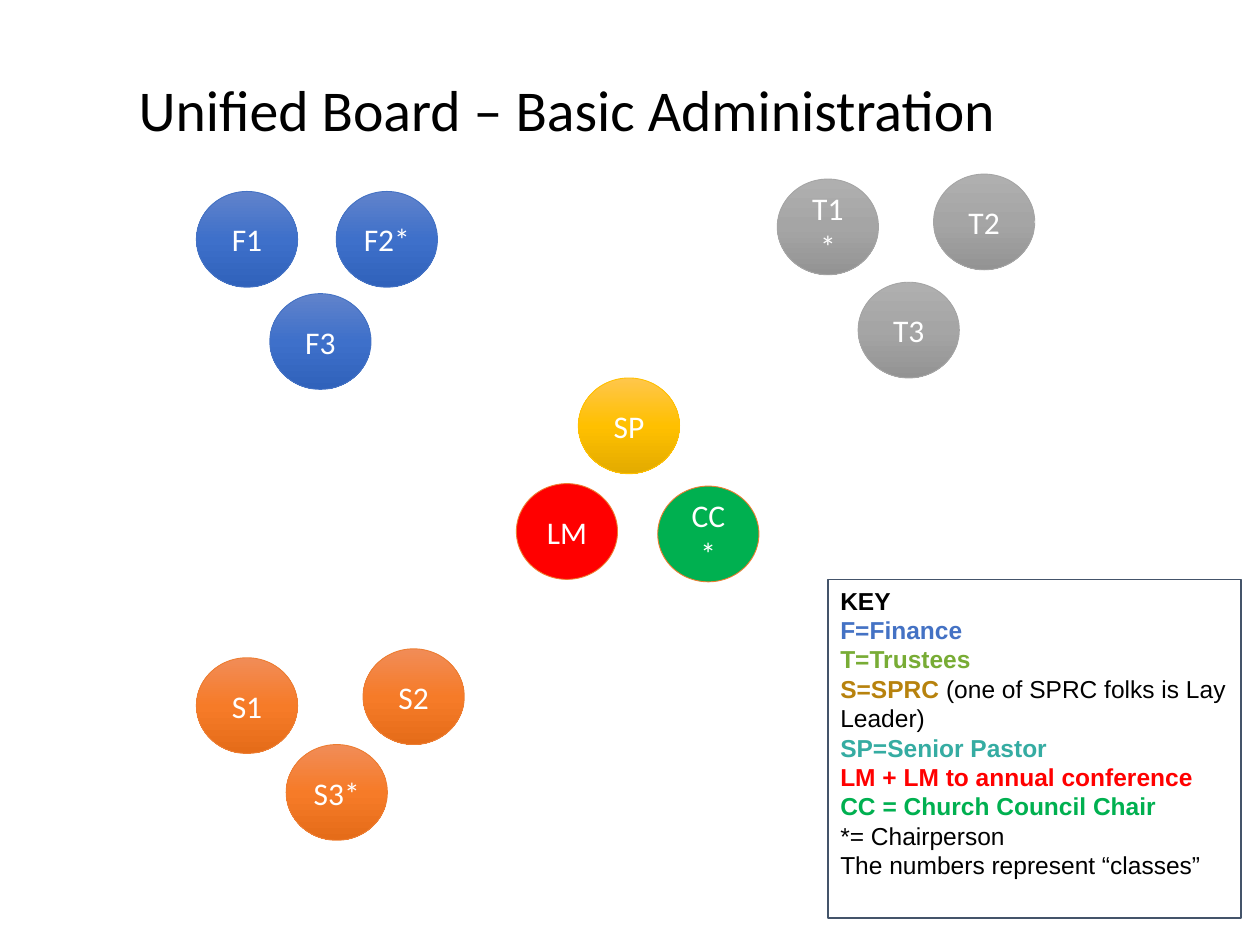
from copy import deepcopy
from dataclasses import dataclass

from pptx import Presentation
from pptx import util as u
from pptx.dml.color import RGBColor
from pptx.enum import shapes, text
from pptx.oxml.ns import qn


@dataclass(frozen=True)
class Theme:
    title_font: str = "Calibri"
    key_font: str = "Arial"
    title_size: float = 33
    circle_size: float = 18
    key_size: float = 14
    black: str = "000000"
    white: str = "FFFFFF"
    frame: str = "44546A"
    # Circle styles: fill (one colour or gradient stops) and line
    finance: tuple = (("6183CB", "3E70CA", "3062BB"), "4472C4")
    trustees: tuple = (("AFAFAF", "A5A5A5", "939393"), "A5A5A5")
    sprc: tuple = (("F18C57", "F67B28", "E56C19"), "ED7D31")
    pastor: tuple = (("FFC64B", "FFC000", "E3AB00"), "FFC000")
    lay_member: tuple = (("FF0000",), "ED7D31")
    council: tuple = (("00B050",), "ED7D31")
    # Key text
    finance_text: str = "4472C4"
    trustees_text: str = "78AC35"
    sprc_text: str = "B7820D"
    pastor_text: str = "35ACA2"
    lay_member_text: str = "FF0000"
    council_text: str = "00B050"


def rgb(value):
    return RGBColor.from_string(value)


class Board:
    CIRCLE_WIDTH, CIRCLE_HEIGHT, CIRCLE_INSET = 2.04, 1.93, 0.25

    def __init__(self, slide, theme):
        self.slide = slide
        self.theme = theme

    def style(self, font, name, size, color):
        font.name, font.size = name, u.Pt(size)
        font.color.rgb = rgb(color)

    def title(self, words, left, top, width, height):
        box = self.slide.shapes.add_textbox(*map(u.Cm, (left, top, width, height)))
        frame = box.text_frame
        frame.word_wrap = True
        frame.vertical_anchor = text.MSO_ANCHOR.MIDDLE
        paragraph = frame.paragraphs[0]
        paragraph.text = words
        paragraph.alignment = text.PP_ALIGN.CENTER
        paragraph.line_spacing = 0.9
        self.style(paragraph.font, self.theme.title_font, self.theme.title_size, self.theme.black)

    def fill(self, shape, colors):
        if len(colors) == 1:
            shape.fill.solid()
            shape.fill.fore_color.rgb = rgb(colors[0])
            return
        shape.fill.gradient()
        shape.fill.gradient_angle = 270
        stop_list = shape._element.spPr.find(qn("a:gradFill")).find(qn("a:gsLst"))
        stop_list.insert(1, deepcopy(stop_list[0]))
        for index, (stop, color) in enumerate(zip(shape.fill.gradient_stops, colors)):
            stop.color.rgb = rgb(color)
            stop.position = index / (len(colors) - 1)

    def circle(self, label, left, top, look):
        colors, line = look
        shape = self.slide.shapes.add_shape(
            shapes.MSO_SHAPE.OVAL, u.Cm(left), u.Cm(top),
            u.Cm(self.CIRCLE_WIDTH), u.Cm(self.CIRCLE_HEIGHT))
        shape.shadow.inherit = False
        self.fill(shape, colors)
        shape.line.color.rgb = rgb(line)
        shape.line.width = u.Pt(0.5)
        frame = shape.text_frame
        frame.word_wrap = True
        frame.margin_left = frame.margin_right = u.Cm(self.CIRCLE_INSET)
        frame.vertical_anchor = text.MSO_ANCHOR.MIDDLE
        paragraph = frame.paragraphs[0]
        paragraph.text = label
        paragraph.alignment = text.PP_ALIGN.CENTER
        self.style(paragraph.font, self.theme.title_font, self.theme.circle_size, self.theme.white)

    def key(self, entries, left, top, width, height):
        box = self.slide.shapes.add_textbox(*map(u.Cm, (left, top, width, height)))
        box.line.color.rgb = rgb(self.theme.frame)
        box.line.width = u.Pt(0.75)
        frame = box.text_frame
        frame.word_wrap = True
        for index, (term, color, note) in enumerate(entries):
            paragraph = frame.add_paragraph() if index else frame.paragraphs[0]
            self.style(paragraph.font, self.theme.key_font, self.theme.key_size, self.theme.black)
            for words, shade, bold in ((term, color, True), (note, self.theme.black, False)):
                if words:
                    run = paragraph.add_run()
                    run.text = words
                    run.font.bold = bold
                    self.style(run.font, self.theme.key_font, self.theme.key_size, shade)


def main():
    presentation = Presentation()
    presentation.slide_width, presentation.slide_height = u.Cm(25.4), u.Cm(19.05)
    theme = Theme()
    board = Board(presentation.slides.add_slide(presentation.slide_layouts[6]), theme)

    # Title
    board.title("Unified Board – Basic Administration", 0, 0.86, 22.86, 2.82)

    # Committee members and officers
    members = (
        ("F1", 3.96, 3.86, theme.finance),
        ("F3", 5.44, 5.92, theme.finance),
        ("F2*", 6.78, 3.86, theme.finance),
        ("T1*", 15.67, 3.61, theme.trustees),
        ("T3", 17.3, 5.69, theme.trustees),
        ("T2", 18.82, 3.51, theme.trustees),
        ("S1", 3.96, 13.26, theme.sprc),
        ("S3*", 5.77, 15.01, theme.sprc),
        ("S2", 7.32, 13.08, theme.sprc),
        ("SP", 11.66, 7.62, theme.pastor),
        ("LM", 10.41, 9.75, theme.lay_member),
        ("CC*", 13.26, 9.8, theme.council),
    )
    for member in members:
        board.circle(*member)

    # Key: bold term, its colour, plain note
    board.key((
        ("KEY", theme.black, ""),
        ("F=Finance", theme.finance_text, ""),
        ("T=Trustees", theme.trustees_text, ""),
        ("S=SPRC ", theme.sprc_text, "(one of SPRC folks is Lay Leader)"),
        ("SP=Senior Pastor", theme.pastor_text, ""),
        ("LM + LM to annual conference", theme.lay_member_text, ""),
        ("CC = Church Council Chair", theme.council_text, ""),
        ("", theme.black, "*= Chairperson"),
        ("", theme.black, "The numbers represent “classes”"),
    ), 16.69, 11.68, 8.33, 6.83)

    presentation.save("out.pptx")


if __name__ == "__main__":
    main()
